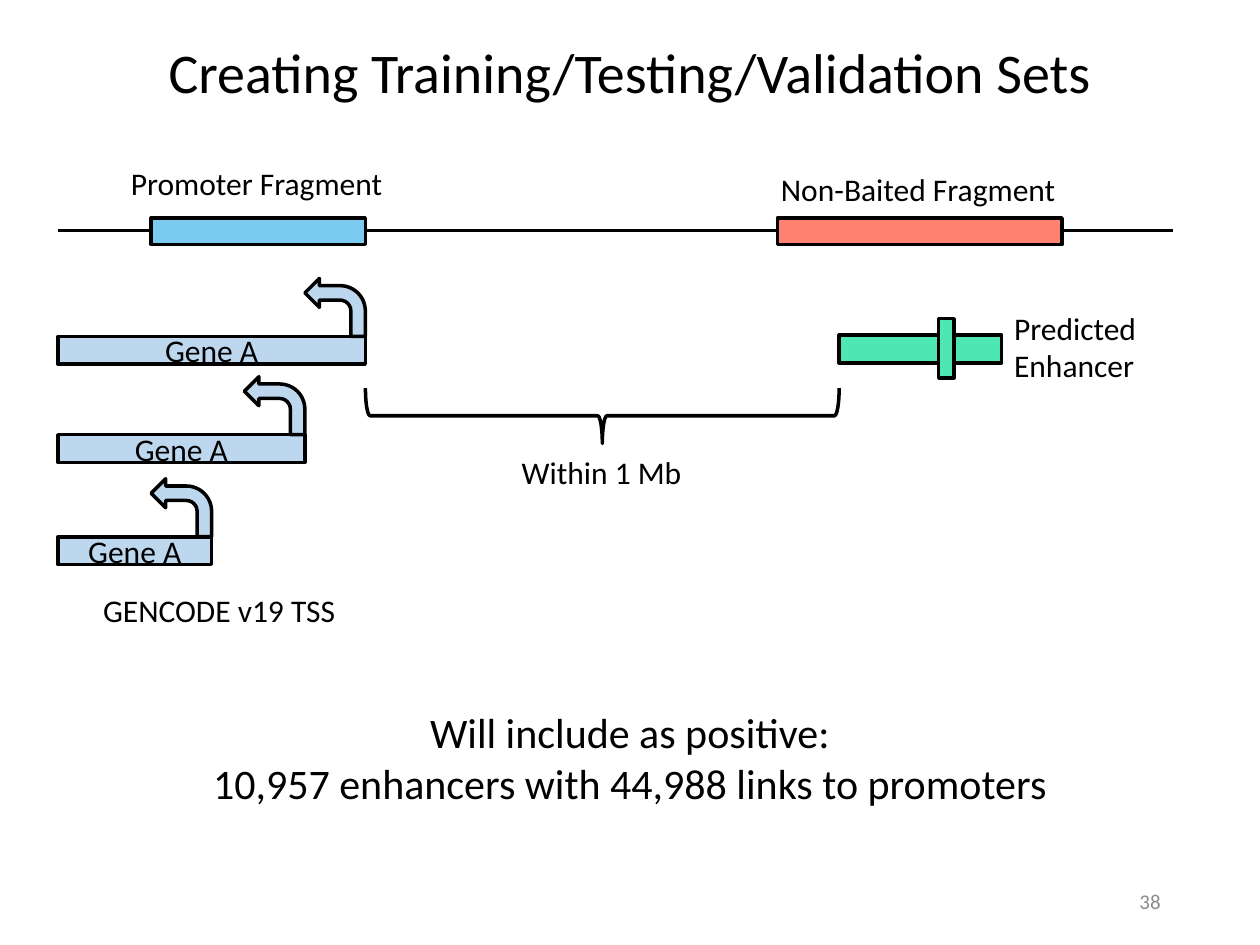
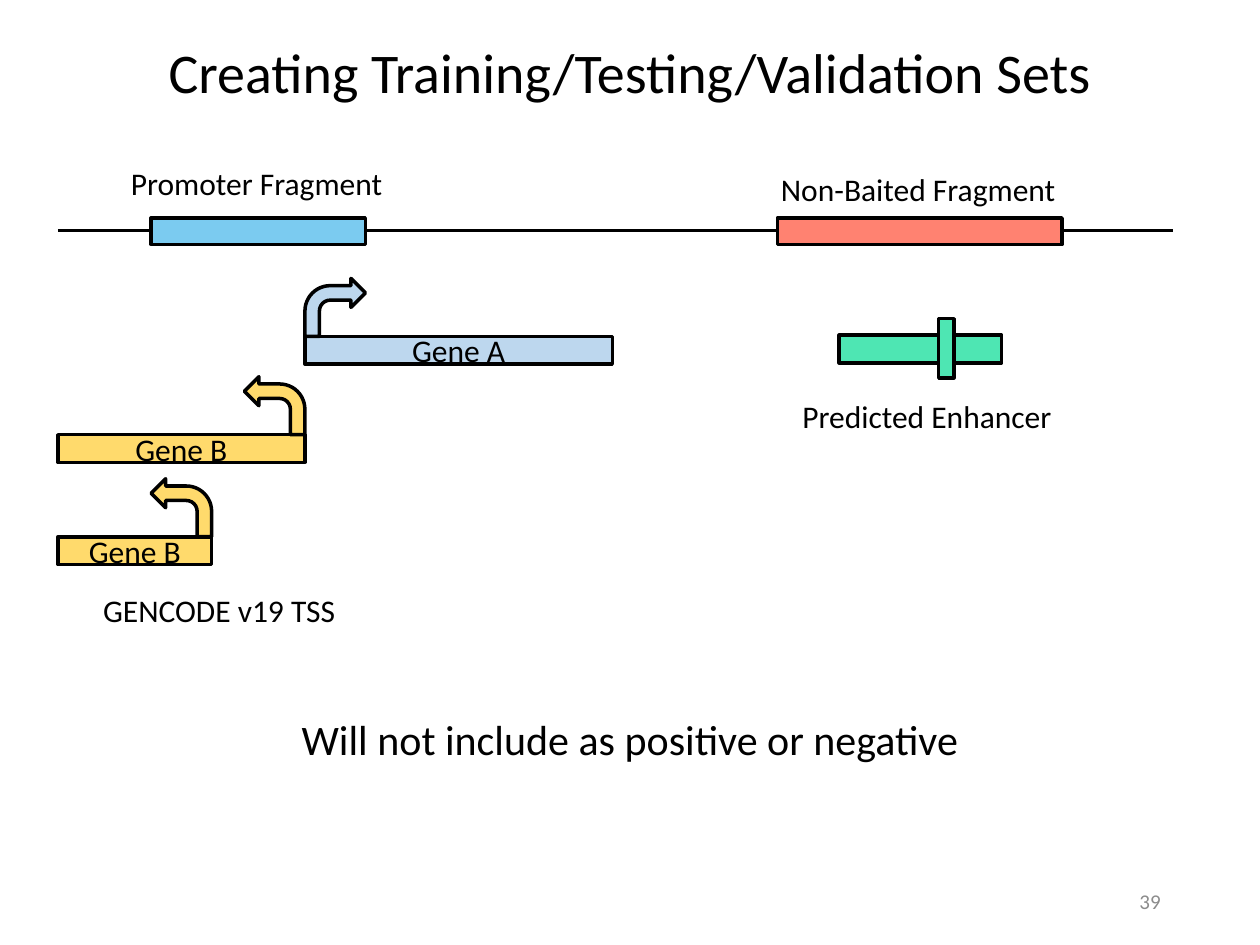
import pptx
import pptx.dml.color
import pptx.enum.shapes
import pptx.enum.text
import pptx.oxml.ns
import pptx.util
import lxml.etree

Inches = pptx.util.Inches
RGBColor = pptx.dml.color.RGBColor
Align = pptx.enum.text.PP_ALIGN
Anchor = pptx.enum.text.MSO_ANCHOR
Kind = pptx.enum.shapes.MSO_SHAPE

BLACK = RGBColor(0x00, 0x00, 0x00)
GRAY = RGBColor(0x8C, 0x8C, 0x8C)
PROMOTER_BLUE = RGBColor(0x7B, 0xCB, 0xF0)
FRAGMENT_RED = RGBColor(0xFF, 0x82, 0x71)
ENHANCER_GREEN = RGBColor(0x4E, 0xE6, 0xB3)
GENE_A_BLUE = RGBColor(0xBD, 0xD7, 0xEE)
GENE_B_YELLOW = RGBColor(0xFF, 0xDA, 0x6C)

TITLE = "Creating Training/Testing/Validation Sets"
TRACK_LEFT, TRACK_RIGHT, TRACK_Y = 0.46, 9.31, 1.83
GENE_HEIGHT = 0.22
ARROW_WIDTH, ARROW_HEIGHT = 0.48, 0.46


class SlideBuilder:
    font = "Calibri"
    line_width = pptx.util.Pt(2)

    def __init__(self, deck):
        self.deck = deck
        self.page = None

    def start_page(self):
        self.page = self.deck.slides.add_slide(self.deck.slide_layouts[5])

    def fill_text(self, frame, lines, size=18, color=BLACK, align=Align.LEFT,
                  anchor=Anchor.TOP, wrap=True):
        frame.word_wrap = wrap
        frame.vertical_anchor = anchor
        font_format = {"name": self.font, "size": pptx.util.Pt(size)}
        for index, line in enumerate(lines):
            para = frame.paragraphs[0] if index == 0 else frame.add_paragraph()
            para.alignment = align
            span = para.add_run()
            span.text = line
            for name, value in font_format.items():
                setattr(span.font, name, value)
            span.font.color.rgb = color

    def title(self, text):
        box = self.page.shapes.title
        place = {"left": 0, "top": 0.25, "width": 10, "height": 0.64}
        for name, value in place.items():
            setattr(box, name, Inches(value))
        self.fill_text(box.text_frame, [text], size=32, align=Align.CENTER)

    def text(self, left, top, width, height, *lines, **style):
        box = self.page.shapes.add_textbox(
            Inches(left), Inches(top), Inches(width), Inches(height))
        self.fill_text(box.text_frame, lines, **style)

    def label(self, left, top, width, *lines):
        height = 0.4 + 0.31 * (len(lines) - 1)
        self.text(left, top, width, height, *lines, wrap=False)

    def shape(self, kind, left, top, width, height, fill=None):
        shape = self.page.shapes.add_shape(
            kind, Inches(left), Inches(top), Inches(width), Inches(height))
        shape.shadow.inherit = False
        if fill is None:
            shape.fill.background()
        else:
            shape.fill.solid()
            shape.fill.fore_color.rgb = fill
        shape.line.color.rgb = BLACK
        shape.line.width = self.line_width
        return shape

    def bar(self, left, top, width, height, fill):
        return self.shape(Kind.RECTANGLE, left, top, width, height, fill)

    def track(self):
        line = self.page.shapes.add_connector(
            pptx.enum.shapes.MSO_CONNECTOR.STRAIGHT,
            Inches(TRACK_LEFT), Inches(TRACK_Y), Inches(TRACK_RIGHT), Inches(TRACK_Y))
        line.line.color.rgb = BLACK
        line.line.width = self.line_width
        lxml.etree.SubElement(line.element.spPr, pptx.oxml.ns.qn("a:effectLst"))

    def gene(self, name, left, top, width, fill, forward=False):
        body = self.bar(left, top, width, GENE_HEIGHT, fill)
        self.fill_text(body.text_frame, [name], align=Align.CENTER, anchor=Anchor.MIDDLE)
        arrow_left = left if forward else left + width - ARROW_WIDTH
        arrow = self.shape(Kind.BENT_ARROW, arrow_left, top - ARROW_HEIGHT,
                           ARROW_WIDTH, ARROW_HEIGHT, fill)
        if not forward:
            arrow.element.spPr.get_or_add_xfrm().set("flipH", "1")

    def brace(self, left, top, width, height):
        shape = self.shape(Kind.RIGHT_BRACE, left, top, width, height)
        shape.rotation = 90

    def common_parts(self, number):
        self.start_page()
        self.track()
        self.title(TITLE)
        self.text(7.06, 6.95, 2.25, 0.4, str(number), size=12, color=GRAY,
                  align=Align.RIGHT, anchor=Anchor.MIDDLE)
        self.bar(1.2, 1.73, 1.7, 0.21, PROMOTER_BLUE)
        self.bar(6.17, 1.73, 2.26, 0.21, FRAGMENT_RED)
        self.bar(6.66, 2.66, 1.29, 0.22, ENHANCER_GREEN)
        self.bar(7.45, 2.53, 0.12, 0.47, ENHANCER_GREEN)
        self.label(0.72, 4.64, 2.06, "GENCODE v19 TSS")
        self.label(0.94, 1.25, 2.22, "Promoter Fragment")
        self.label(6.1, 1.3, 2.4, "Non-Baited Fragment")

    def lower_genes(self, name, fill):
        for top, width in ((3.45, 1.96), (4.26, 1.22)):
            self.gene(name, TRACK_LEFT, top, width, fill)

    def conclusion(self, top, height, *lines):
        self.text(0, top, 10, height, *lines, size=24, align=Align.CENTER)


def main():
    deck = pptx.Presentation()
    deck.slide_width = Inches(10)
    deck.slide_height = Inches(7.5)
    builder = SlideBuilder(deck)

    builder.common_parts(38)
    builder.gene("Gene A", TRACK_LEFT, 2.67, 2.44, GENE_A_BLUE)
    builder.lower_genes("Gene A", GENE_A_BLUE)
    builder.label(7.95, 2.4, 1.22, "Predicted", "Enhancer")
    builder.brace(4.56, 1.42, 0.44, 3.76)
    builder.text(3.94, 3.55, 1.67, 0.4, "Within 1 Mb", align=Align.CENTER)
    builder.conclusion(5.56, 0.91, "Will include as positive:",
                       "10,957 enhancers with 44,988 links to promoters")

    builder.common_parts(39)
    builder.gene("Gene A", 2.42, 2.67, 2.44, GENE_A_BLUE, forward=True)
    builder.lower_genes("Gene B", GENE_B_YELLOW)
    builder.label(6.27, 3.1, 2.2, "Predicted Enhancer")
    builder.conclusion(5.61, 0.5, "Will not include as positive or negative")

    deck.save("out.pptx")


if __name__ == "__main__":
    main()
